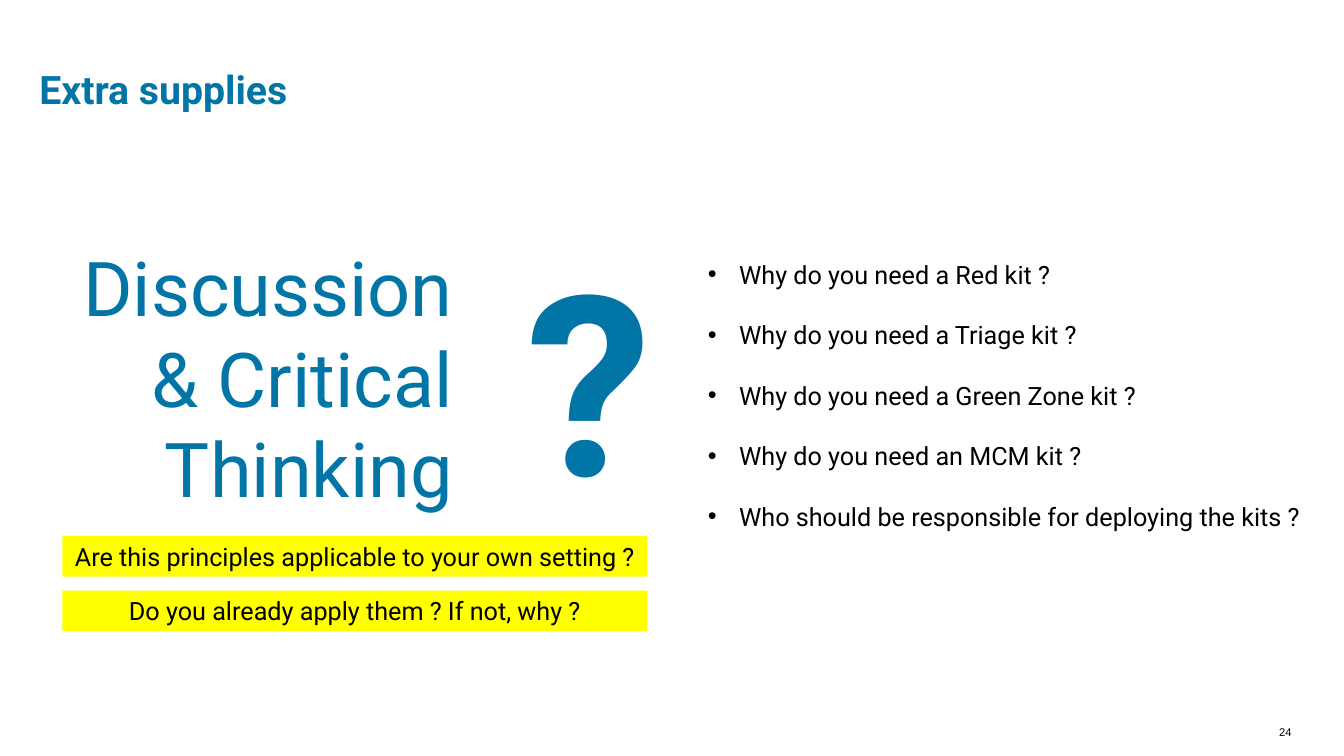
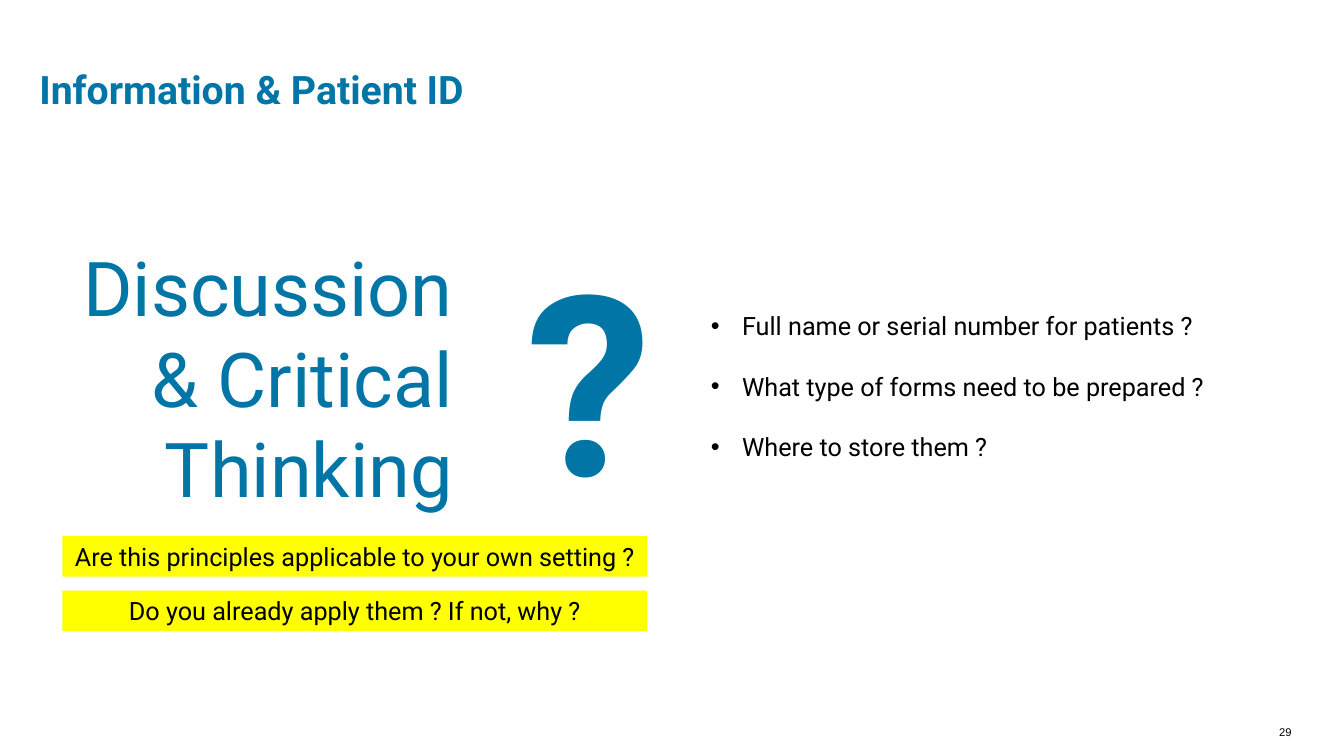
from dataclasses import dataclass

from pptx import Presentation
from pptx.dml.color import RGBColor
from pptx.enum.shapes import MSO_SHAPE
from pptx.enum.text import MSO_ANCHOR as Anchor, MSO_AUTO_SIZE as AutoSize, PP_ALIGN as Align
from pptx.presentation import Presentation as Deck
from pptx.shapes.base import BaseShape
from pptx.slide import Slide
from pptx.text.text import TextFrame
from pptx.util import Inches, Pt

BLUE = "0075A6"
BLACK = "000000"
YELLOW = "FFFF00"
FONT = "Roboto"
BULLET_INDENT = 0.31
PROMPT_TOP = 5.32
PROMPT_STEP = 0.54


@dataclass(frozen=True)
class Box:
    left: float
    top: float
    width: float
    height: float


@dataclass(frozen=True)
class TextStyle:
    size: float
    color: str = BLACK
    bold: bool = False
    font: str = FONT
    align: Align = Align.LEFT
    line_spacing: float = 1.0


@dataclass(frozen=True)
class Label:
    text: str
    box: Box
    style: TextStyle
    margin: float = 0.1


@dataclass(frozen=True)
class Discussion:
    number: str
    title: str
    questions: tuple[str, ...]
    questions_box: Box


TITLE_BOX = Box(0.37, 0.33, 10.06, 0.79)
NUMBER_BOX = Box(12.49, 7.2, 0.32, 0.2)

TITLE_STYLE = TextStyle(28, BLUE, bold=True, line_spacing=0.9)
LIST_STYLE = TextStyle(18, line_spacing=2.0)
PROMPT_STYLE = TextStyle(18, align=Align.CENTER)
NUMBER_STYLE = TextStyle(8, font="Arial", align=Align.RIGHT)

SHARED_LABELS = (
    Label("?", Box(5.12, 2.18, 1.3, 3.13),
          TextStyle(180, BLUE, bold=True, align=Align.CENTER)),
    Label("Discussion & Critical Thinking", Box(0.58, 2.34, 4.01, 2.83),
          TextStyle(54, BLUE, align=Align.RIGHT)),
)
PROMPTS = (
    "Are this principles applicable to your own setting ?",
    "Do you already apply them ? If not, why ?",
)
DISCUSSIONS = (
    Discussion(
        "24",
        "Extra supplies",
        (
            "Why do you need a Red kit ?",
            "Why do you need a Triage kit ?",
            "Why do you need a Green Zone kit ?",
            "Why do you need an MCM kit ?",
            "Who should be responsible for deploying the kits ?",
        ),
        Box(6.92, 2.22, 6.14, 3.04),
    ),
    Discussion(
        "29",
        "Information & Patient ID",
        (
            "Full name or serial number for patients ?",
            "What type of forms need to be prepared ?",
            "Where to store them ?",
        ),
        Box(6.95, 2.73, 5.19, 2.43),
    ),
)


def rgb(color: str) -> RGBColor:
    return RGBColor.from_string(color)


def lengths(box: Box) -> tuple[Inches, Inches, Inches, Inches]:
    return Inches(box.left), Inches(box.top), Inches(box.width), Inches(box.height)


def place(shape: BaseShape, box: Box) -> None:
    shape.left, shape.top, shape.width, shape.height = lengths(box)


def write(frame: TextFrame, lines: tuple[str, ...], style: TextStyle,
          anchor: Anchor = Anchor.TOP, wrap: bool = True, bullets: bool = False) -> None:
    frame.auto_size = AutoSize.NONE
    frame.word_wrap = wrap
    frame.vertical_anchor = anchor
    for index, line in enumerate(lines):
        paragraph = frame.paragraphs[0] if index == 0 else frame.add_paragraph()
        paragraph.alignment = style.align
        paragraph.line_spacing = style.line_spacing
        paragraph.space_before = Pt(0)
        if bullets:
            properties = paragraph._p.get_or_add_pPr()
            properties.set("marL", str(Inches(BULLET_INDENT)))
            properties.set("indent", str(-Inches(BULLET_INDENT)))
        run = paragraph.add_run()
        run.text = line
        run.font.name = style.font
        run.font.size = Pt(style.size)
        run.font.bold = style.bold
        run.font.color.rgb = rgb(style.color)


def set_margins(frame: TextFrame, left: float, top: float, right: float, bottom: float) -> None:
    frame.margin_left, frame.margin_top = Inches(left), Inches(top)
    frame.margin_right, frame.margin_bottom = Inches(right), Inches(bottom)


def add_label(slide: Slide, label: Label) -> None:
    frame = slide.shapes.add_textbox(*lengths(label.box)).text_frame
    set_margins(frame, label.margin, label.margin / 2, label.margin, label.margin / 2)
    write(frame, (label.text,), label.style)


def add_prompt(slide: Slide, text: str, box: Box) -> None:
    shape = slide.shapes.add_shape(MSO_SHAPE.RECTANGLE, *lengths(box))
    shape.shadow.inherit = False
    shape.fill.solid()
    shape.fill.fore_color.rgb = rgb(YELLOW)
    shape.line.fill.background()
    write(shape.text_frame, (text,), PROMPT_STYLE, Anchor.MIDDLE, wrap=False)


def add_discussion(presentation: Deck, discussion: Discussion) -> None:
    slide = presentation.slides.add_slide(presentation.slide_layouts[1])
    title, body = slide.shapes.title, slide.placeholders[1]
    place(title, TITLE_BOX)
    set_margins(title.text_frame, 0.02, 0, 0.39, 0)
    write(title.text_frame, (discussion.title,), TITLE_STYLE, Anchor.BOTTOM)
    place(body, discussion.questions_box)
    write(body.text_frame, discussion.questions, LIST_STYLE, bullets=True)
    for label in SHARED_LABELS:
        add_label(slide, label)
    for index, prompt in enumerate(PROMPTS):
        add_prompt(slide, prompt, Box(0.62, PROMPT_TOP + index * PROMPT_STEP, 5.8, 0.4))
    add_label(slide, Label(discussion.number, NUMBER_BOX, NUMBER_STYLE, margin=0))


def main() -> None:
    presentation = Presentation()
    presentation.slide_width = Inches(13.33)
    presentation.slide_height = Inches(7.5)
    for discussion in DISCUSSIONS:
        add_discussion(presentation, discussion)
    presentation.save("out.pptx")


if __name__ == "__main__":
    main()
